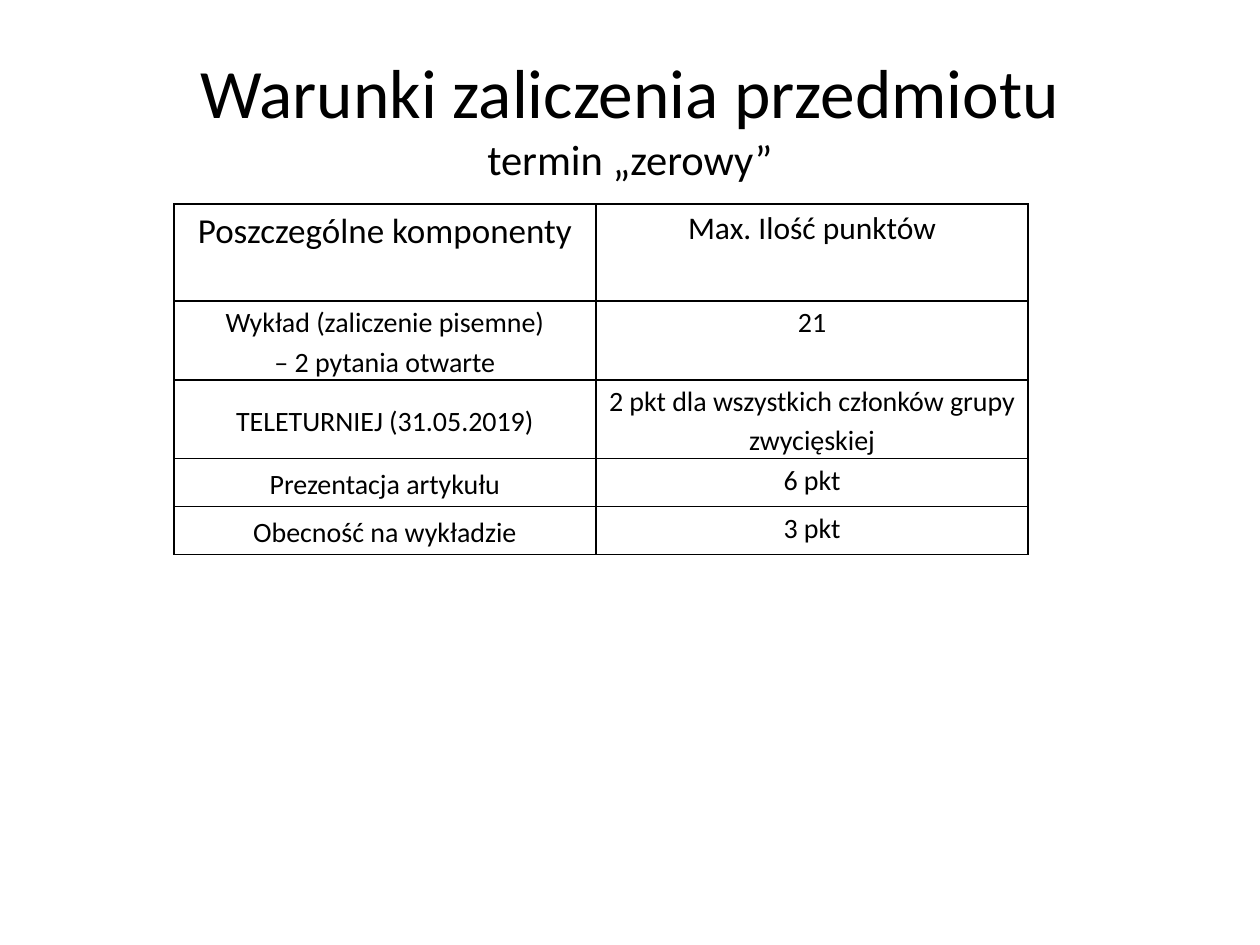
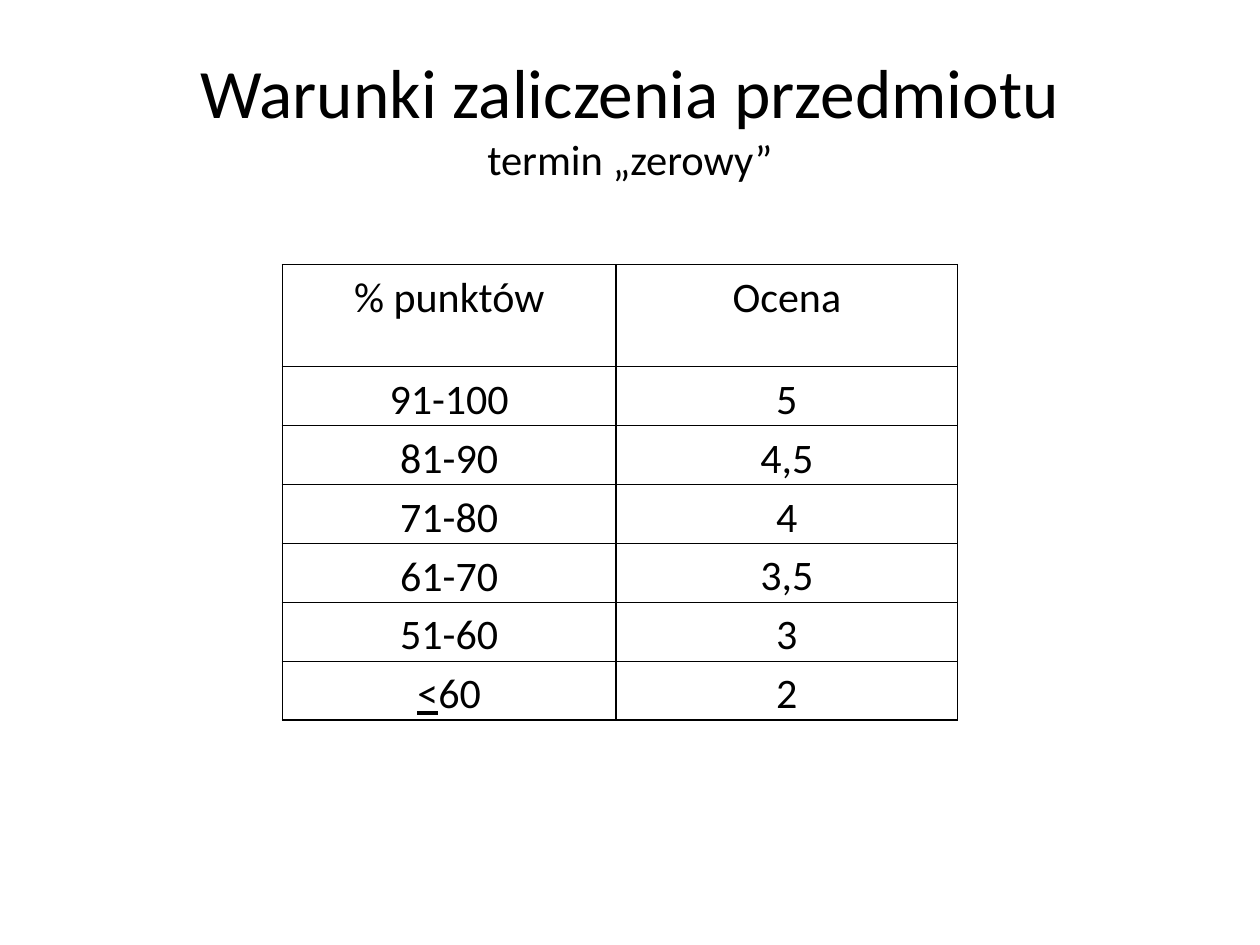
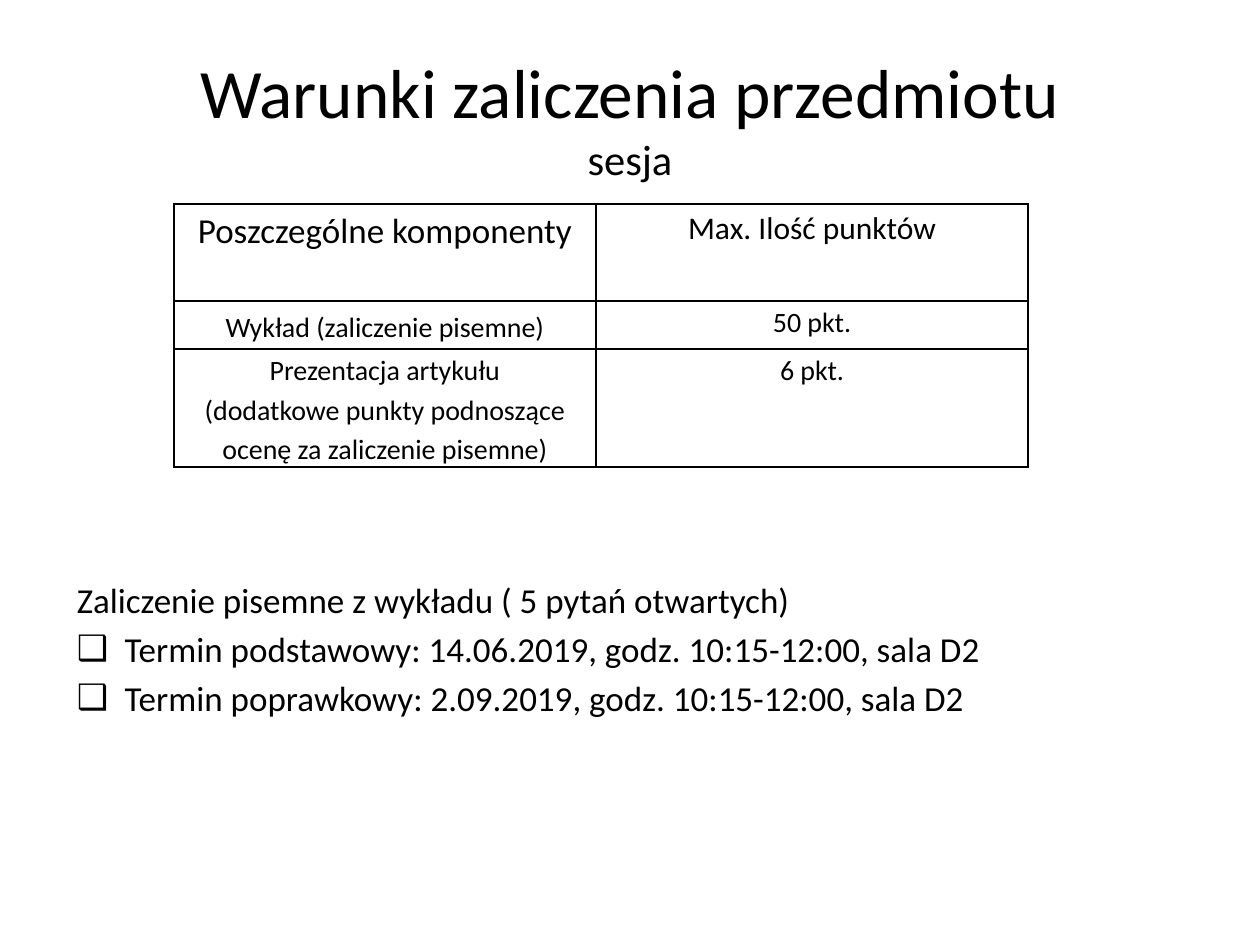
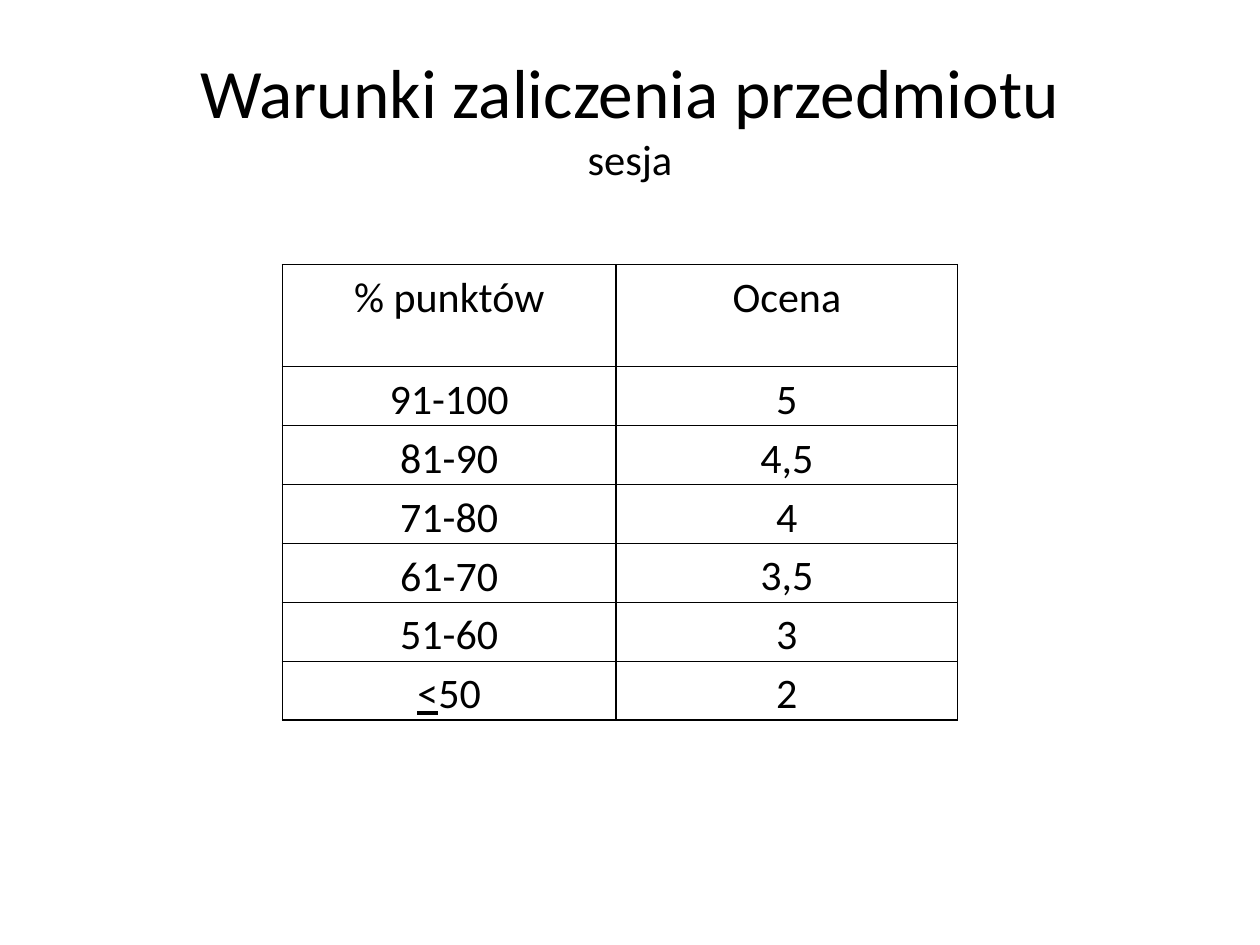
"""Course credit rules: components, points and grades for each exam term."""
import pptx
import pptx.dml.color
import pptx.enum.text
import pptx.oxml
import pptx.oxml.ns
import pptx.util
from lxml import etree

Inches = pptx.util.Inches
Pt = pptx.util.Pt
qn = pptx.oxml.ns.qn
ALIGN = pptx.enum.text.PP_ALIGN
ANCHOR = pptx.enum.text.MSO_ANCHOR
COLORS = {"text": "000000", "border": "000000"}
TITLE = "Warunki zaliczenia przedmiotu"
TITLE_BOX = {"left": Inches(0.5), "top": Inches(0.3),
             "width": Inches(9), "height": Inches(1.25)}
LIST_BOX = {"left": Inches(0.51), "top": Inches(4.54),
            "width": Inches(9), "height": Inches(2.47)}
CELL = {"margin_left": Inches(0.07), "margin_right": Inches(0.07),
        "margin_top": 0, "margin_bottom": 0}
CELL_P = {"alignment": ALIGN.CENTER, "line_spacing": 1.15}
PLAIN_TABLE = {"first_row": False, "horz_banding": False}

COMPONENTS = {"left": 1.38, "top": 1.62, "cols": [3.35, 3.43],
              "head": 0.77, "row": 0.38, "head_sizes": [20, 18], "size": 16}
GRADES = {"left": 2.24, "top": 2.1, "cols": [2.65, 2.71],
          "head": 0.81, "row": 0.4, "head_sizes": [24, 24], "size": 24}
COMPONENTS_HEAD = ("Poszczególne komponenty", "Max. Ilość punktów")
GRADE_ROWS = [("% punktów", "Ocena"), ("91-100", "5"), ("81-90", "4,5"),
              ("71-80", "4"), ("61-70", "3,5"), ("51-60", "3")]

SLIDES = [
    {"term": "termin „zerowy”", "style": COMPONENTS, "height": 2.76, "rows": [
        COMPONENTS_HEAD,
        ("Wykład (zaliczenie pisemne)\n– 2 pytania otwarte", "21"),
        ("TELETURNIEJ (31.05.2019)",
         "2 pkt dla wszystkich członków grupy zwycięskiej"),
        ("Prezentacja artykułu", "6 pkt"),
        ("Obecność na wykładzie", "3 pkt")]},
    {"term": "termin „zerowy”", "style": GRADES, "height": 3.57,
     "rows": GRADE_ROWS + [("<60", "2")]},
    {"term": "sesja", "style": COMPONENTS, "height": 2.07, "rows": [
        COMPONENTS_HEAD,
        ("Wykład (zaliczenie pisemne)", "50 pkt."),
        ("Prezentacja artykułu\n(dodatkowe punkty podnoszące ocenę "
         "za zaliczenie pisemne)", "6 pkt.")],
     "list": ["Zaliczenie pisemne z wykładu ( 5 pytań otwartych)",
              "Termin podstawowy: 14.06.2019, godz. 10:15-12:00, sala D2",
              "Termin poprawkowy: 2.09.2019, godz. 10:15-12:00, sala D2"]},
    {"term": "sesja", "style": GRADES, "height": 3.57,
     "rows": GRADE_ROWS + [("<50", "2")]},
]


def apply(obj, fmt):
    for name, value in fmt.items():
        setattr(obj, name, value)


def add_run(p, text, size, **fmt):
    r = p.add_run()
    r.text = text
    apply(r.font, {"name": "Calibri", "size": Pt(size), **fmt})
    r.font.color.rgb = pptx.dml.color.RGBColor.from_string(COLORS["text"])


prs = pptx.Presentation()
prs.slide_width, prs.slide_height = Inches(10), Inches(7.5)

for item in SLIDES:
    s = prs.slides.add_slide(prs.slide_layouts[1 if "list" in item else 5])
    sp = s.shapes.title
    apply(sp, TITLE_BOX)
    tf = sp.text_frame
    apply(tf, {"vertical_anchor": ANCHOR.MIDDLE,
               "auto_size": pptx.enum.text.MSO_AUTO_SIZE.NONE})
    p = tf.paragraphs[0]
    p.alignment = ALIGN.CENTER
    add_run(p, TITLE, 39.6)
    p.add_line_break()
    etree.SubElement(p._p.find(qn("a:br")), qn("a:rPr"), sz="3960")
    add_run(p, item["term"], 24.3)

    style, rows = item["style"], item["rows"]
    sp = s.shapes.add_table(
        len(rows), 2, Inches(style["left"]), Inches(style["top"]),
        Inches(sum(style["cols"])), Inches(item["height"]))
    tbl = sp.table
    apply(tbl, PLAIN_TABLE)
    for col, width in zip(tbl.columns, style["cols"]):
        col.width = Inches(width)
    for i, texts in enumerate(rows):
        tbl.rows[i].height = Inches(style["row"] if i else style["head"])
        for j, text in enumerate(texts):
            cell = tbl.cell(i, j)
            middle = i > 0 and j == 0
            apply(cell, {**CELL, "vertical_anchor":
                         ANCHOR.MIDDLE if middle else ANCHOR.TOP})
            for side in ("lnL", "lnR", "lnT", "lnB"):
                ln = etree.SubElement(cell._tc.get_or_add_tcPr(),
                                      qn("a:" + side), w=str(Pt(1)))
                fill = etree.SubElement(ln, qn("a:solidFill"))
                etree.SubElement(fill, qn("a:srgbClr"), val=COLORS["border"])
            cell.fill.background()
            size = style["size"] if i else style["head_sizes"][j]
            tf = cell.text_frame
            for k, line in enumerate(text.split("\n")):
                p = tf.add_paragraph() if k else tf.paragraphs[0]
                apply(p, CELL_P)
                if line.startswith("<"):
                    add_run(p, "<", size, underline=True)
                    line = line[1:]
                add_run(p, line, size)
    sp.height = Inches(item["height"])

    if "list" in item:
        sp = s.placeholders[1]
        apply(sp, LIST_BOX)
        tf = sp.text_frame
        tf.auto_size = pptx.enum.text.MSO_AUTO_SIZE.NONE
        for k, line in enumerate(item["list"]):
            p = tf.add_paragraph() if k else tf.paragraphs[0]
            p.space_before = Pt(4)
            pPr = p._p.get_or_add_pPr()
            pPr.set("marL", str(Inches(0.38)))
            pPr.set("indent", str(Inches(-0.38)))
            if k:
                etree.SubElement(pPr, qn("a:buChar"), char="❑")
            else:
                etree.SubElement(pPr, qn("a:buNone"))
            add_run(p, line, 20)

prs.save("out.pptx")
